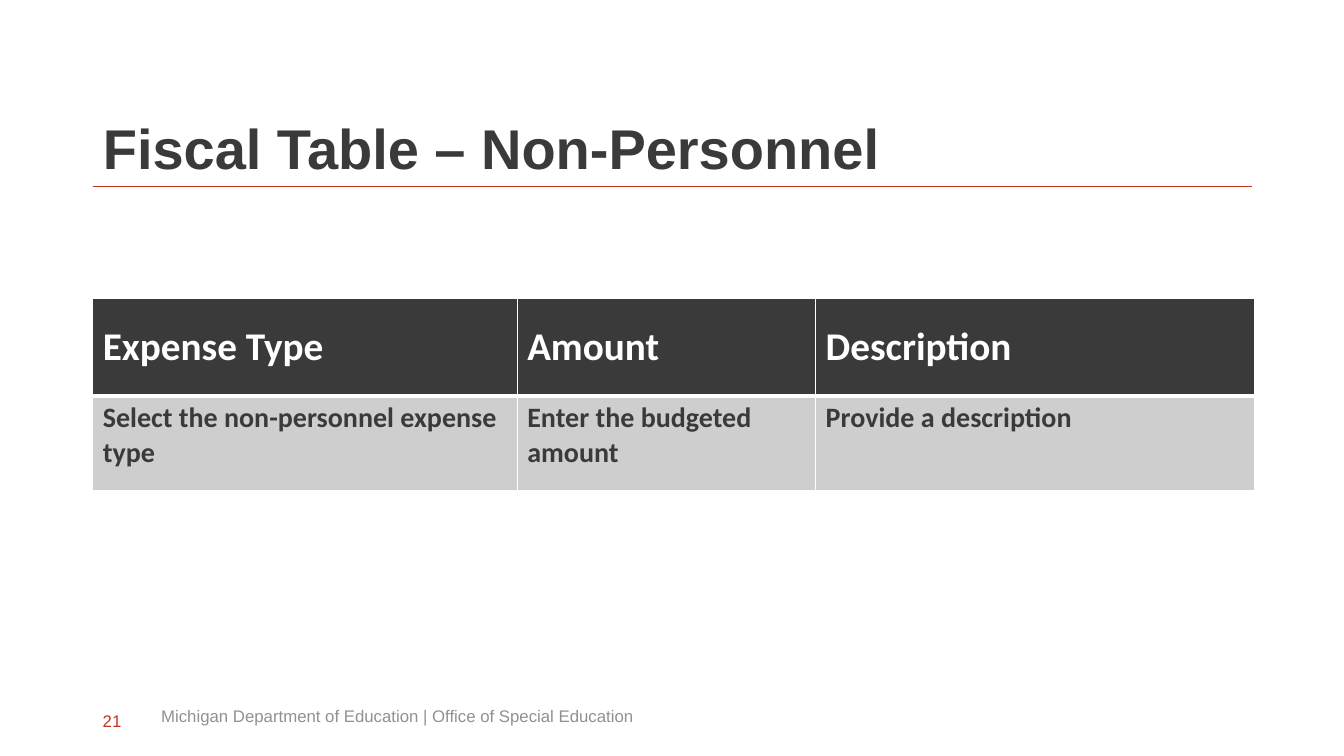
from lxml.etree import SubElement
from pptx import Presentation
from pptx.dml.color import RGBColor
from pptx.enum.shapes import MSO_CONNECTOR
from pptx.enum.text import MSO_ANCHOR, PP_ALIGN
from pptx.oxml import parse_xml
from pptx.oxml.ns import nsdecls, qn
from pptx.util import Inches, Pt

DARK = RGBColor(0x3A, 0x3A, 0x3A)
RED = RGBColor(0xC3, 0x32, 0x1B)
GRAY = RGBColor(0x91, 0x91, 0x91)
LIGHT = RGBColor(0xCE, 0xCE, 0xCE)
WHITE = RGBColor(0xFF, 0xFF, 0xFF)

LEFT = 0.92
COLUMN_WIDTHS = [4.21, 2.96, 4.35]
ROW_HEIGHTS = [0.97, 0.94]
ROWS = [
    ["Expense Type", "Amount", "Description"],
    [
        "Select the non-personnel expense type",
        "Enter the budgeted amount",
        "Provide a description",
    ],
]
HEADER = {"size": Pt(28), "name": "Calibri", "bold": True}
BODY = {"size": Pt(20), "name": "Calibri", "bold": True}
ROW_STYLES = [
    (HEADER, WHITE, DARK, MSO_ANCHOR.MIDDLE),
    (BODY, DARK, LIGHT, MSO_ANCHOR.TOP),
]


def write_text(frame, text, format_values, color):
    paragraph = frame.paragraphs[0]
    paragraph.alignment = PP_ALIGN.LEFT
    span = paragraph.add_run()
    span.text = text
    for name, value in format_values.items():
        setattr(span.font, name, value)
    span.font.color.rgb = color
    return paragraph


def add_title(page, left, top, width, height):
    """Fill the title placeholder and rule a red line along its bottom."""
    title = page.shapes.title
    title.left, title.top = Inches(left), Inches(top)
    title.width, title.height = Inches(width), Inches(height)
    frame = title.text_frame
    frame.word_wrap = True
    frame.vertical_anchor = MSO_ANCHOR.BOTTOM
    format_values = {"size": Pt(40), "name": "Arial", "bold": True}
    paragraph = write_text(frame, "Fiscal Table – Non-Personnel", format_values, DARK)
    paragraph.line_spacing = 0.9

    bottom = Inches(top + height)
    rule = page.shapes.add_connector(
        MSO_CONNECTOR.STRAIGHT, Inches(left), bottom, Inches(left + 11.5), bottom
    )
    rule.line.color.rgb = RED
    rule.line.width = Pt(0.5)
    SubElement(rule.element.spPr, qn("a:effectLst"))


def add_borders(cell, bottom_points):
    properties = cell._tc.get_or_add_tcPr()
    for side, points in {"L": 1, "R": 1, "T": 1, "B": bottom_points}.items():
        properties.append(parse_xml(
            f'<a:ln{side} {nsdecls("a")} w="{Pt(points)}"><a:solidFill>'
            f'<a:srgbClr val="{WHITE}"/></a:solidFill></a:ln{side}>'
        ))


def add_expense_table(page, left, top):
    table = page.shapes.add_table(
        len(ROWS), len(COLUMN_WIDTHS), Inches(left), Inches(top),
        Inches(sum(COLUMN_WIDTHS)), Inches(sum(ROW_HEIGHTS)),
    ).table
    for column, width in zip(table.columns, COLUMN_WIDTHS):
        column.width = Inches(width)
    for index, (row, height) in enumerate(zip(table.rows, ROW_HEIGHTS)):
        row.height = Inches(height)
        format_values, color, fill, anchor = ROW_STYLES[index]
        for cell, text in zip(row.cells, ROWS[index]):
            add_borders(cell, 3 if index == 0 else 1)
            cell.fill.solid()
            cell.fill.fore_color.rgb = fill
            cell.vertical_anchor = anchor
            write_text(cell.text_frame, text, format_values, color)


def add_footer_text(page, text, color, left, top, width):
    box = page.shapes.add_textbox(Inches(left), Inches(top), Inches(width), Inches(0.4))
    box.text_frame.word_wrap = True
    box.text_frame.vertical_anchor = MSO_ANCHOR.MIDDLE
    write_text(box.text_frame, text, {"size": Pt(12), "name": "Arial"}, color)


def main():
    deck = Presentation()
    deck.slide_width, deck.slide_height = Inches(13.33), Inches(7.5)
    page = deck.slides.add_slide(deck.slide_layouts[5])
    add_title(page, LEFT, 0.4, 12, 1.45)
    add_expense_table(page, LEFT, 2.96)
    add_footer_text(page, "21", RED, LEFT, 6.95, 0.45)
    add_footer_text(
        page, "Michigan Department of Education | Office of Special Education",
        GRAY, 1.5, 6.9, 8.39,
    )
    deck.save("out.pptx")


if __name__ == "__main__":
    main()
